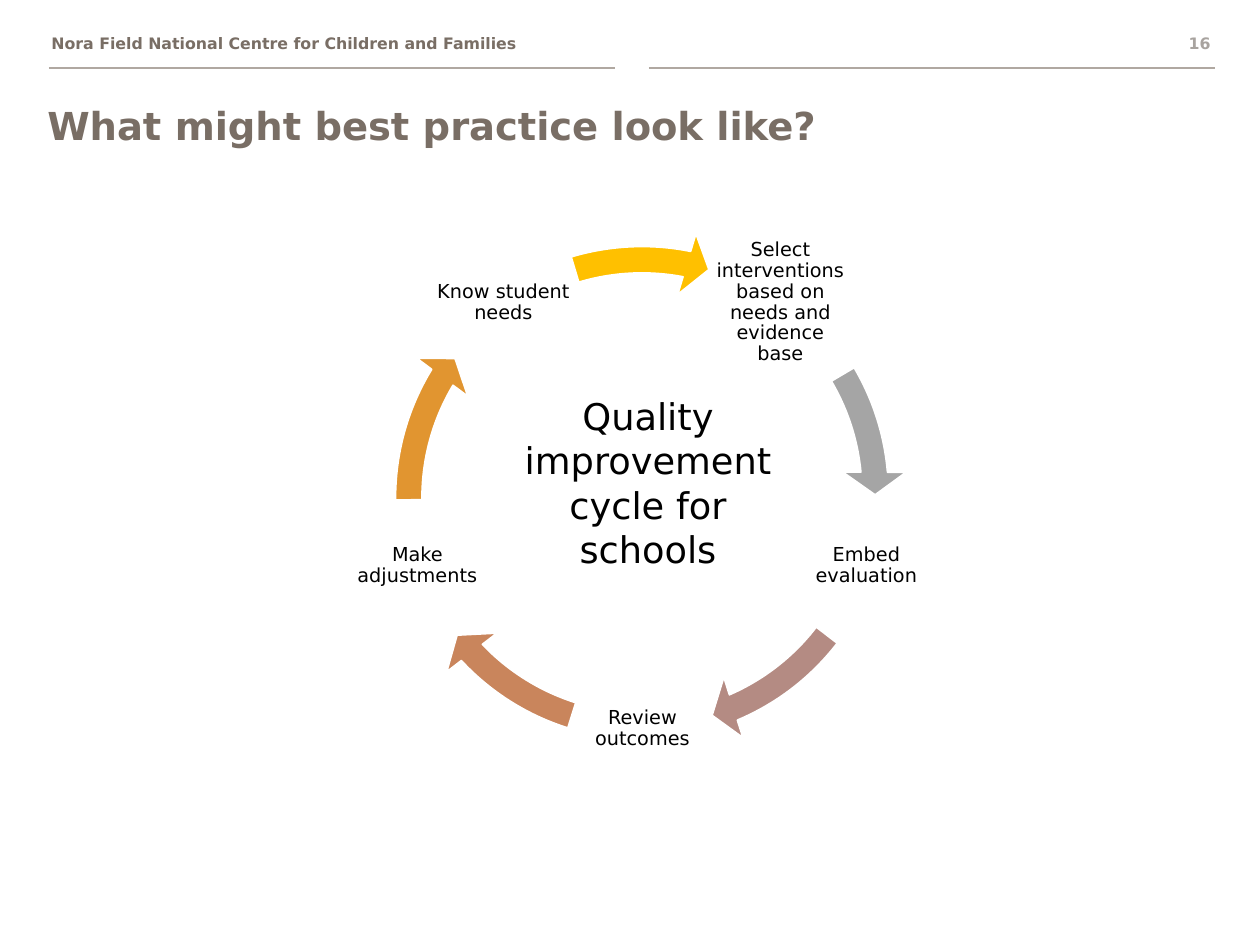
import math

from lxml import etree
from pptx import Presentation
from pptx.dml.color import RGBColor
from pptx.enum.shapes import MSO_CONNECTOR, MSO_SHAPE
from pptx.enum.text import MSO_ANCHOR, PP_ALIGN
from pptx.oxml.ns import qn
from pptx.util import Pt

PX = 914400 // 126  # EMU in one px
FONT = "DejaVu Sans"

STRAIGHT = MSO_CONNECTOR.STRAIGHT
CIRCULAR_ARROW = MSO_SHAPE.CIRCULAR_ARROW
TOP, MIDDLE = MSO_ANCHOR.TOP, MSO_ANCHOR.MIDDLE
LEFT, CENTER, RIGHT = PP_ALIGN.LEFT, PP_ALIGN.CENTER, PP_ALIGN.RIGHT

BROWN = RGBColor(0x79, 0x6E, 0x65)
PAGE_GREY = RGBColor(0xA8, 0xA3, 0x9F)
RULE_GREY = RGBColor(0xB0, 0xA8, 0xA1)
BLACK = RGBColor(0x00, 0x00, 0x00)
WHITE = RGBColor(0xFF, 0xFF, 0xFF)
GREY = RGBColor(0xA5, 0xA5, 0xA5)
MAUVE = RGBColor(0xB4, 0x8B, 0x83)
COPPER = RGBColor(0xC9, 0x85, 0x5C)
AMBER = RGBColor(0xE1, 0x95, 0x30)
YELLOW = RGBColor(0xFF, 0xC0, 0x00)

# Clockwise: label, then start angle, end angle and colour of the arrow after it
STEPS = [
    ("Select interventions based on needs and evidence base", 329.45, 354.88, GREY),
    ("Embed evaluation", 37.57, 66.9, MAUVE),
    ("Review outcomes", 107.5, 136.83, COPPER),
    ("Make adjustments", 179.52, 211.14, AMBER),
    ("Know student needs", 253.31, 281.09, YELLOW),
]


def add_text(slide, text, box, size, color=BLACK, bold=False, align=LEFT,
             anchor=TOP, inset=None, spacing=None):
    frame = slide.shapes.add_textbox(*(n * PX for n in box)).text_frame
    frame.word_wrap = True
    frame.vertical_anchor = anchor
    if inset is not None:
        frame.margin_left = frame.margin_right = inset * PX
        frame.margin_top = frame.margin_bottom = inset * PX
    paragraph = frame.paragraphs[0]
    paragraph.alignment = align
    if spacing:
        paragraph.line_spacing = spacing
    run = paragraph.add_run()
    run.text = text
    run.font.name = FONT
    run.font.size = Pt(size)
    run.font.bold = bold
    run.font.color.rgb = color


def add_rule(slide, left, top, width):
    rule = slide.shapes.add_connector(
        STRAIGHT, left * PX, top * PX, (left + width) * PX, top * PX)
    rule.line.color.rgb = RULE_GREY
    rule.line.width = Pt(1)
    etree.SubElement(rule._element.spPr, qn("a:effectLst"))


def add_header(slide, left, top, width):
    # Two rules with a gap between them
    gap = 34
    rule_width = (width - gap) // 2
    for rule_left in (left, left + rule_width + gap):
        add_rule(slide, rule_left, top + 40, rule_width)
    add_text(slide, "Nora Field National Centre for Children and Families",
             (left - 10, top, 565, 32), 9, BROWN, bold=True)
    add_text(slide, "16", (left + width - 66, top, 73, 32), 9, PAGE_GREY,
             bold=True, align=RIGHT)


def add_cycle_arrow(slide, left, top, size, start, end, color):
    arrow = slide.shapes.add_shape(
        CIRCULAR_ARROW, left * PX, top * PX, size * PX, size * PX)
    # Angles are stored in 60000ths of a degree, adjustments in 100000ths
    for i, value in enumerate((0.05, 3.36, end * 0.6, start * 0.6, 0.06)):
        arrow.adjustments[i] = value
    arrow.shadow.inherit = False
    arrow.fill.solid()
    arrow.fill.fore_color.rgb = color
    arrow.line.color.rgb = WHITE
    arrow.line.width = Pt(1)


def add_cycle(slide, left, top, size):
    center_x, center_y = left + size // 2, top + size // 2
    radius, label_size = 236, 141
    for i, (label, start, end, color) in enumerate(STEPS):
        angle = math.radians(-54 + i * 360 / len(STEPS))
        label_left = round(center_x + radius * math.cos(angle) - label_size / 2)
        label_top = round(center_y + radius * math.sin(angle) - label_size / 2)
        add_text(slide, label, (label_left, label_top, label_size, label_size),
                 11, align=CENTER, anchor=MIDDLE, inset=2, spacing=0.9)
        # The arrow up the left side sits slightly lower
        drop = 5 if color == AMBER else 0
        add_cycle_arrow(slide, left, top + drop, size, start, end, color)
    add_text(slide, "Quality improvement cycle for schools",
             (left + 111, top + 160, 320, 190), 21, align=CENTER)


def main():
    prs = Presentation()
    prs.slide_width, prs.slide_height = 1260 * PX, 945 * PX
    slide = prs.slides.add_slide(prs.slide_layouts[6])
    add_header(slide, 49, 28, 1167)
    add_text(slide, "What might best practice look like?",
             (35, 96, 1134, 96), 22, BROWN, bold=True)
    add_cycle(slide, 377, 228, 530)
    prs.save("out.pptx")


if __name__ == "__main__":
    main()
